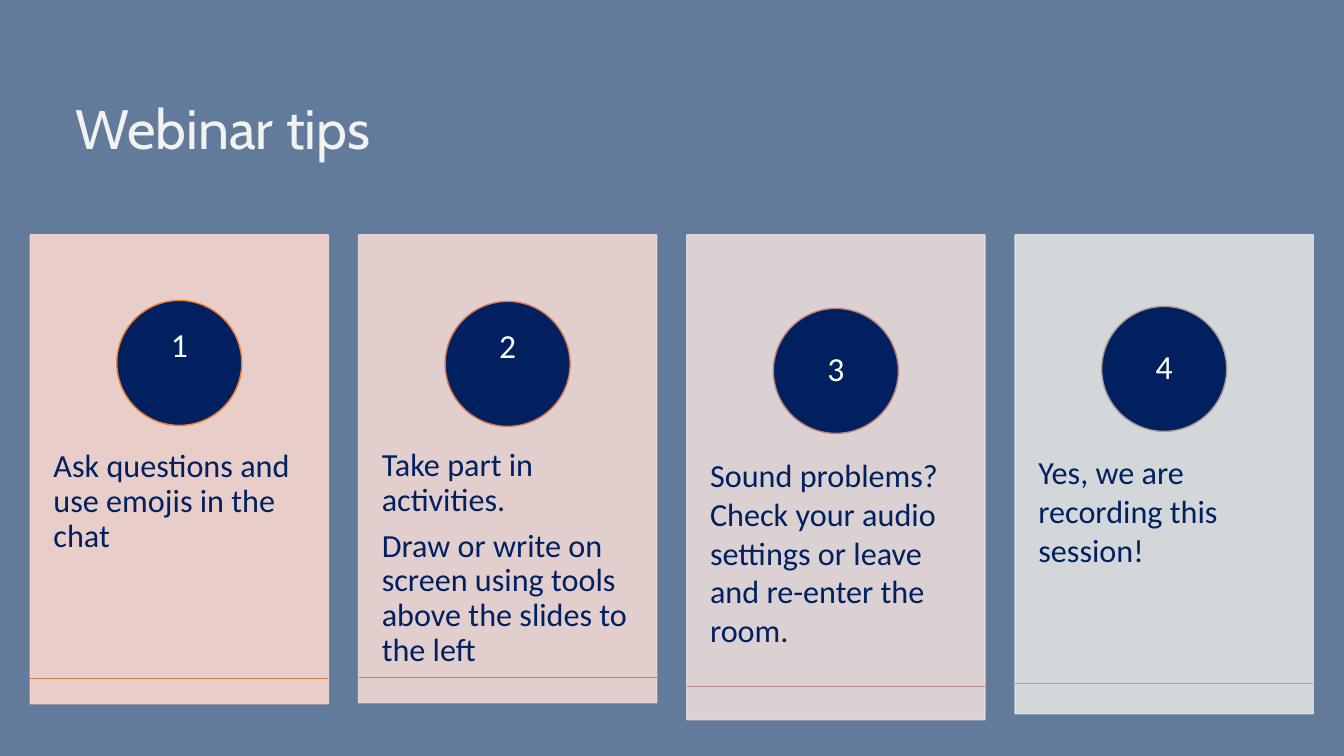
from lxml import etree
from pptx import Presentation
from pptx.dml.color import RGBColor
from pptx.enum import shapes, text
from pptx.oxml.ns import qn
from pptx.util import Pt

BACKGROUND = RGBColor(0x63, 0x7B, 0x9B)
TITLE = RGBColor(0xF2, 0xF2, 0xF2)
NAVY = RGBColor(0x00, 0x20, 0x60)
WHITE = RGBColor(0xFF, 0xFF, 0xFF)
CARD_FILLS = [RGBColor(0xF8, 0xD7, 0xCE), RGBColor(0xF1, 0xD8, 0xD4),
              RGBColor(0xE9, 0xDB, 0xDA), RGBColor(0xE1, 0xE1, 0xE1)]
RING_COLORS = [RGBColor(0xED, 0x7D, 0x31), RGBColor(0xD5, 0x7B, 0x56),
               RGBColor(0xBF, 0x84, 0x78), RGBColor(0xAD, 0x98, 0x97)]
RULE_COLORS = [RGBColor(0xE0, 0x7A, 0x44), RGBColor(0xCA, 0x7E, 0x67),
               RGBColor(0xB6, 0x8D, 0x88), RGBColor(0xA5, 0xA5, 0xA5)]

# Card layout in points
LEFT, TOP, PITCH, WIDTH = 21.6, 167.8, 234.5, 213
CIRCLE = 89.3

# Paragraphs, card height, circle top, text top, rule height, line spacing, digit lift
TIPS = [
    (["Ask questions and use emojis in the chat"],
     334.8, 214.6, 295.2, 484.6, 0.9, 23.6),
    (["Take part in activities.",
      "Draw or write on screen using tools above the slides to the left"],
     334.1, 215.3, 294.5, 483.8, 0.9, 23.6),
    (["Sound problems? Check your audio settings or leave and re-enter the room."],
     346.3, 220.3, 299.5, 490.3, 1.0, 0),
    (["Yes, we are recording this session!"],
     342, 218.9, 297.4, 488.2, 1.0, 0),
]


def add_filled(kind, left, top, width, height, fill, line):
    shape = page.shapes.add_shape(kind, Pt(left), Pt(top), Pt(width), Pt(height))
    shape.shadow.inherit = False
    shape.fill.solid()
    shape.fill.fore_color.rgb = fill
    shape.line.color.rgb = line
    shape.line.width = Pt(1)
    return shape


def style(para, size, color, spacing):
    para.font.name = "Calibri"
    para.font.size = Pt(size)
    para.font.color.rgb = color
    para.line_spacing = spacing


deck = Presentation()
deck.slide_width, deck.slide_height = Pt(960), Pt(540)
page = deck.slides.add_slide(deck.slide_layouts[5])
page.background.fill.solid()
page.background.fill.fore_color.rgb = BACKGROUND

# Title
title = page.shapes.title
title.left, title.top, title.width, title.height = Pt(46.8), Pt(23.8), Pt(828), Pt(96.5)
frame = title.text_frame
frame.text = "Webinar tips"
frame.vertical_anchor = text.MSO_ANCHOR.BOTTOM
frame.margin_bottom = Pt(5)
para = frame.paragraphs[0]
para.alignment = text.PP_ALIGN.LEFT
para.line_spacing = 0.9
para.font.name = "Cabin"
para.font.size = Pt(39.6)
para.font.color.rgb = TITLE

for index, tip in enumerate(TIPS):
    lines, height, circle_top, text_top, rule_y, spacing, lift = tip
    left = LEFT + index * PITCH

    # Translucent card
    card = add_filled(shapes.MSO_SHAPE.RECTANGLE, left, TOP, WIDTH, height,
                      CARD_FILLS[index], CARD_FILLS[index])
    for color in card.element.spPr.iter(qn("a:srgbClr")):
        etree.SubElement(color, qn("a:alpha"), val="90000")

    # Tip text
    box = page.shapes.add_textbox(Pt(left), Pt(text_top), Pt(WIDTH), Pt(TOP + height - text_top - 6))
    frame = box.text_frame
    frame.word_wrap = True
    frame.margin_left = frame.margin_right = Pt(16.6)
    frame.margin_top = frame.margin_bottom = Pt(26)
    frame.text = "\n".join(lines)
    for para in frame.paragraphs:
        style(para, 23, NAVY, spacing)
        para.space_after = Pt(8)

    # Numbered circle
    circle = add_filled(shapes.MSO_SHAPE.OVAL, left + (WIDTH - CIRCLE) / 2, circle_top,
                        CIRCLE, CIRCLE, NAVY, RING_COLORS[index])
    frame = circle.text_frame
    frame.text = str(index + 1)
    frame.vertical_anchor = text.MSO_ANCHOR.MIDDLE
    frame.margin_top, frame.margin_bottom = Pt(0), Pt(lift)
    para = frame.paragraphs[0]
    para.alignment = text.PP_ALIGN.CENTER
    style(para, 24, WHITE, 0.9)

    # Rule near the foot of the card
    rule = page.shapes.add_connector(shapes.MSO_CONNECTOR.STRAIGHT, Pt(left), Pt(rule_y),
                                     Pt(left + WIDTH), Pt(rule_y))
    rule.line.color.rgb = RULE_COLORS[index]
    rule.line.width = Pt(1)
    etree.SubElement(rule.element.spPr, qn("a:effectLst"))

deck.save("out.pptx")
